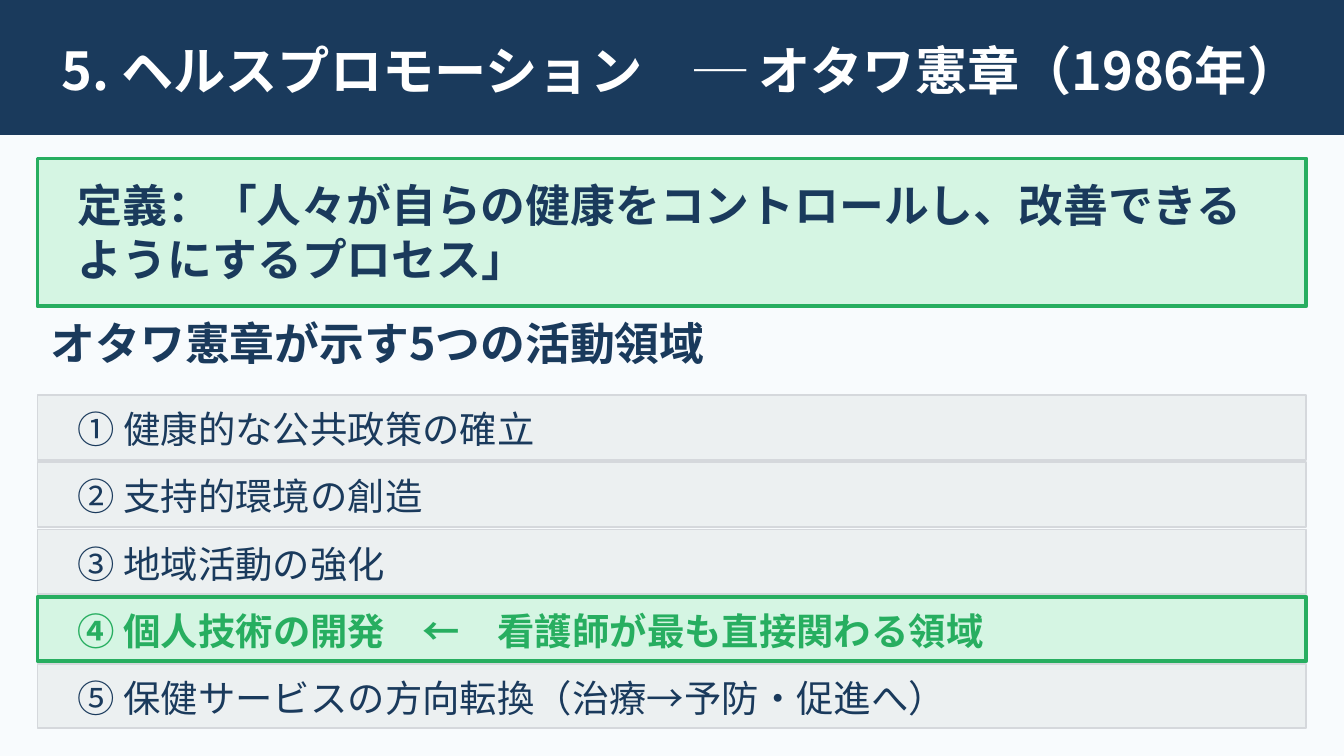
from dataclasses import dataclass

from lxml.etree import SubElement
from pptx import Presentation
from pptx.dml.color import RGBColor
from pptx.enum.shapes import MSO_SHAPE as Preset
from pptx.enum.text import MSO_ANCHOR as Anchor, MSO_AUTO_SIZE as AutoSize, PP_ALIGN as Align
from pptx.oxml.ns import qn
from pptx.shapes.autoshape import Shape
from pptx.slide import Slide
from pptx.util import Inches, Pt


@dataclass(frozen=True)
class Theme:
    font: str = "Noto Sans CJK JP"
    background: str = "F8FBFD"
    navy: str = "1A3A5C"
    white: str = "FFFFFF"
    green: str = "27AE60"
    pale_green: str = "D5F5E3"
    gray: str = "ECF0F1"
    gray_line: str = "D5D8DC"
    title_size: int = 28
    heading_size: int = 24
    item_size: int = 20


@dataclass(frozen=True)
class Box:
    left: float
    top: float
    width: float
    height: float

    def lengths(self) -> tuple:
        return tuple(Inches(n) for n in (self.left, self.top, self.width, self.height))


@dataclass(frozen=True)
class Area:
    text: str
    highlighted: bool = False


THEME = Theme()
SLIDE_WIDTH = 10
SLIDE_HEIGHT = SLIDE_WIDTH * 9 / 16
PANEL_LEFT, PANEL_WIDTH = 0.28, 9.44
TEXT_LEFT, TEXT_WIDTH = 0.48, 9.03
FIRST_ROW, ROW_STEP = 2.94, 0.5

AREAS = [
    Area("① 健康的な公共政策の確立"),
    Area("② 支持的環境の創造"),
    Area("③ 地域活動の強化"),
    Area("④ 個人技術の開発　←　看護師が最も直接関わる領域", highlighted=True),
    Area("⑤ 保健サービスの方向転換（治療→予防・促進へ）"),
]


def add_panel(slide: Slide, box: Box, fill: str, line: str, weight: float) -> Shape:
    panel = slide.shapes.add_shape(Preset.RECTANGLE, *box.lengths())
    panel.shadow.inherit = False
    panel.fill.solid()
    panel.fill.fore_color.rgb = RGBColor.from_string(fill)
    panel.line.color.rgb = RGBColor.from_string(line)
    panel.line.width = Pt(weight)
    return panel


def write_text(shape: Shape, text: str, size: int, color: str, bold: bool = True) -> None:
    frame = shape.text_frame
    frame.text = text
    frame.word_wrap = True
    frame.auto_size = AutoSize.NONE
    frame.vertical_anchor = Anchor.MIDDLE
    paragraph = frame.paragraphs[0]
    paragraph.alignment = Align.LEFT
    font = paragraph.font
    font.name = THEME.font
    font.size = Pt(size)
    font.bold = bold
    font.color.rgb = RGBColor.from_string(color)
    # Japanese glyphs take the East Asian typeface
    defaults = paragraph._p.pPr.find(qn("a:defRPr"))
    SubElement(defaults, qn("a:ea"), typeface=THEME.font)


def add_text(slide: Slide, box: Box, text: str, size: int, color: str, bold: bool = True) -> None:
    write_text(slide.shapes.add_textbox(*box.lengths()), text, size, color, bold)


def add_title(slide: Slide, text: str) -> None:
    title = slide.shapes.title
    title.left, title.top, title.width, title.height = Box(0.36, 0.17, 9.48, 0.7).lengths()
    write_text(title, text, THEME.title_size, THEME.white)
    band = add_panel(slide, Box(0, 0, SLIDE_WIDTH, 1), THEME.navy, THEME.navy, 1)
    title.element.addprevious(band.element)  # the band lies behind the title


def add_area(slide: Slide, area: Area, top: float) -> None:
    if area.highlighted:
        fill, line, weight, color = THEME.pale_green, THEME.green, 2, THEME.green
    else:
        fill, line, weight, color = THEME.gray, THEME.gray_line, 1, THEME.navy
    add_panel(slide, Box(PANEL_LEFT, top, PANEL_WIDTH, 0.48), fill, line, weight)
    add_text(slide, Box(TEXT_LEFT, top + 0.04, TEXT_WIDTH, 0.42), area.text,
             THEME.item_size, color, area.highlighted)


def main() -> None:
    presentation = Presentation()
    presentation.slide_width = Inches(SLIDE_WIDTH)
    presentation.slide_height = Inches(SLIDE_HEIGHT)
    slide = presentation.slides.add_slide(presentation.slide_layouts.get_by_name("Title Only"))
    slide.background.fill.solid()
    slide.background.fill.fore_color.rgb = RGBColor.from_string(THEME.background)

    add_title(slide, "5. ヘルスプロモーション　─ オタワ憲章（1986年）")

    # Definition
    add_panel(slide, Box(PANEL_LEFT, 1.18, PANEL_WIDTH, 1.1), THEME.pale_green, THEME.green, 2)
    add_text(slide, Box(TEXT_LEFT, 1.23, TEXT_WIDTH, 0.99),
             "定義：「人々が自らの健康をコントロールし、改善できるようにするプロセス」",
             THEME.heading_size, THEME.navy)

    # Five areas of action
    add_text(slide, Box(PANEL_LEFT, 2.33, PANEL_WIDTH, 0.44),
             "オタワ憲章が示す5つの活動領域", THEME.heading_size, THEME.navy)
    for row, area in enumerate(AREAS):
        add_area(slide, area, FIRST_ROW + row * ROW_STEP)

    presentation.save("out.pptx")


if __name__ == "__main__":
    main()
